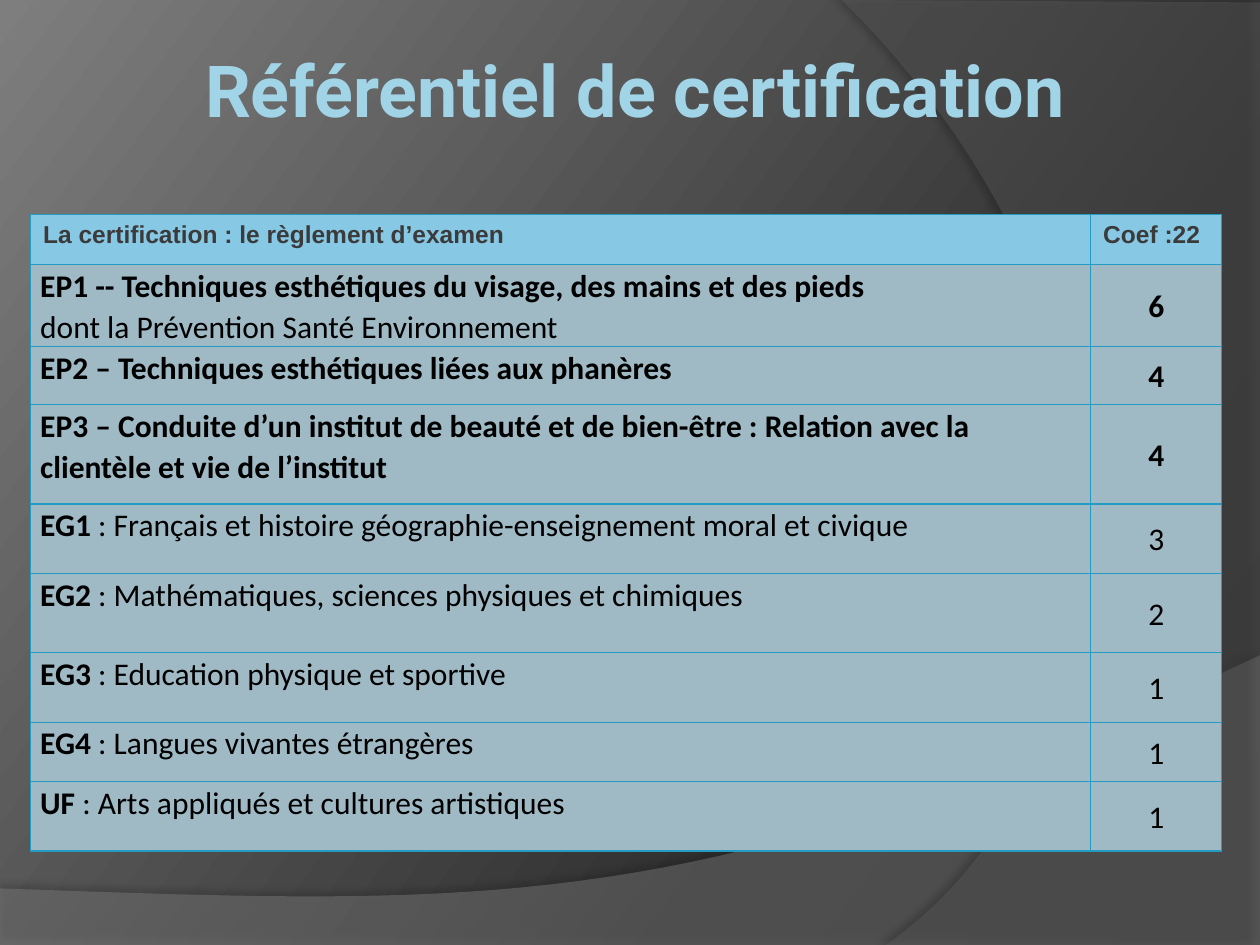
from lxml import etree
from pptx import Presentation
from pptx.dml.color import RGBColor
from pptx.enum.text import MSO_ANCHOR as Anchor, MSO_AUTO_SIZE as AutoSize, PP_ALIGN as Align
from pptx.oxml import parse_xml
from pptx.oxml.ns import nsdecls, qn
from pptx.util import Cm, Pt

COLORS = {
    "title": "A1D4E7", "header": "87C8E5", "header_text": "3B3B3B",
    "body": "9FBAC5", "text": "000000", "border": "239BC2",
    "dark": "282828", "middle": "2F2F2F", "light": "7E7E7E",
    "wave": "7F7F7F", "arc": "5E5E5E", "shadow": "000000",
}


def add_color(parent, color, alpha=None):
    element = etree.SubElement(parent, qn("a:srgbClr"), val=color)
    if alpha is not None:
        etree.SubElement(element, qn("a:alpha"), val=str(alpha * 1000))


def curve(start, control1, control2, end, steps=40):
    points = []
    for step in range(steps + 1):
        t = step / steps
        weights = ((1 - t) ** 3, 3 * t * (1 - t) ** 2, 3 * t * t * (1 - t), t ** 3)
        points.append(tuple(
            sum(weight * value for weight, value in zip(weights, axis))
            for axis in zip(start, control1, control2, end)
        ))
    return points


presentation = Presentation()
presentation.slide_width = Cm(25.4)
presentation.slide_height = Cm(19.05)
slide = presentation.slides.add_slide(presentation.slide_layouts[5])

background = slide.background.fill
background.gradient()
background.gradient_angle = 143
stops = background.gradient_stops[0]._gs.getparent()
for stop in list(stops):
    stops.remove(stop)
for position, name in ((0, "dark"), (30, "middle"), (100, "light")):
    stop = etree.SubElement(stops, qn("a:gs"), pos=str(position * 1000))
    add_color(stop, COLORS[name])

wave = curve((25.4, 13.21), (14.2, 18.52), (9.93, 18.26), (0, 17.91))
wave += [(0, 19.05), (25.4, 19.05)]
arc = curve((17.86, 19.05), (22.63, 15.72), (24.05, 6.99), (16.97, 0))
arc += [(25.4, 0.05), (25.4, 19.05)]
decorations = (("wave", wave, 45, 35, 3.5, 270), ("arc", arc, 40, 45, 4, 180))
for index, (name, points, opacity, shadow_opacity, distance, direction) in enumerate(decorations):
    corners = [(Cm(x), Cm(y)) for x, y in points]
    builder = slide.shapes.build_freeform(*corners[0])
    builder.add_line_segments(corners[1:], close=True)
    shape = builder.convert_to_shape()
    shape.fill.solid()
    shape.fill.fore_color.rgb = RGBColor.from_string(COLORS[name])
    color = shape.fill._xPr.find(qn("a:solidFill"))[0]
    etree.SubElement(color, qn("a:alpha"), val=str(opacity * 1000))
    shape.line.fill.background()
    shape.shadow.inherit = False
    effects = shape._element.spPr.find(qn("a:effectLst"))
    shadow = etree.SubElement(
        effects, qn("a:outerShdw"), blurRad=str(Pt(4)), dist=str(Pt(distance)),
        dir=str(direction * 60000), algn="ctr", rotWithShape="0",
    )
    add_color(shadow, COLORS["shadow"], shadow_opacity)
    slide.shapes._spTree.insert(2 + index, shape._element)

title = slide.shapes.title
title.left, title.top, title.width, title.height = Cm(1.51), Cm(0.93), Cm(22.6), Cm(2.8)
frame = title.text_frame
frame.text = "Référentiel de certification"
frame.auto_size = AutoSize.NONE
frame.vertical_anchor = Anchor.TOP
frame.margin_left = frame.margin_right = Cm(0.13)
frame.margin_top = frame.margin_bottom = 0
paragraph = frame.paragraphs[0]
paragraph.alignment = Align.CENTER
paragraph.font.name = "Roboto"
paragraph.font.size = Pt(41)
paragraph.font.bold = True
paragraph.font.color.rgb = RGBColor.from_string(COLORS["title"])

exams = [
    (1.01, [("La certification : le règlement d’examen", "")], "Coef :22"),
    (1.65, [("EP1 -- Techniques esthétiques du visage, des mains et des pieds", ""),
            ("", "dont la Prévention Santé Environnement")], "6"),
    (1.17, [("EP2 – Techniques esthétiques liées aux phanères", "")], "4"),
    (2.0, [("EP3 – Conduite d’un institut de beauté et de bien-être : Relation avec la "
            "clientèle et vie de l’institut", "")], "4"),
    (1.4, [("EG1", " : Français et histoire géographie-enseignement moral et civique")], "3"),
    (1.6, [("EG2", " : Mathématiques, sciences physiques et chimiques")], "2"),
    (1.4, [("EG3", " : Education physique et sportive")], "1"),
    (1.2, [("EG4", " : Langues vivantes étrangères")], "1"),
    (1.4, [("UF", " : Arts appliqués et cultures artistiques")], "1"),
]
heights = [Cm(height) for height, _, _ in exams]
table = slide.shapes.add_table(
    len(exams), 2, Cm(0.62), Cm(4.32), Cm(24.01), sum(heights)
).table
table.columns[0].width = Cm(21.37)
table.columns[1].width = Cm(2.64)

for row, (_, lines, coefficient) in enumerate(exams):
    table.rows[row].height = heights[row]
    header = row == 0
    bold_coefficient = row < 4
    coefficient_line = (coefficient, "") if bold_coefficient else ("", coefficient)
    for column, content in enumerate((lines, [coefficient_line])):
        cell = table.cell(row, column)
        cell.fill.solid()
        cell.fill.fore_color.rgb = RGBColor.from_string(COLORS["header" if header else "body"])
        cell.margin_left = cell.margin_right = Cm(0.25 if header else 0.19)
        cell.margin_top = cell.margin_bottom = Cm(0.13 if header else 0)
        centered = column == 1 and not header
        cell.vertical_anchor = Anchor.MIDDLE if centered else Anchor.TOP
        for index, parts in enumerate(content):
            frame = cell.text_frame
            paragraph = frame.add_paragraph() if index else frame.paragraphs[0]
            paragraph.alignment = Align.CENTER if centered else Align.LEFT
            paragraph.line_spacing = 1.0 if header else 1.07
            paragraph.font.name = "Arial" if header else "Calibri"
            paragraph.font.size = Pt(14 if header else 18)
            paragraph.font.color.rgb = RGBColor.from_string(
                COLORS["header_text" if header else "text"])
            for text, bold in zip(parts, (True, False)):
                if text:
                    run = paragraph.add_run()
                    run.text = text
                    run.font.bold = bold
        properties = cell._tc.get_or_add_tcPr()
        for index, side in enumerate(("lnL", "lnR", "lnT", "lnB")):
            properties.insert(index, parse_xml(
                f'<a:{side} {nsdecls("a")} w="{Pt(0.75)}"><a:solidFill>'
                f'<a:srgbClr val="{COLORS["border"]}"/></a:solidFill></a:{side}>'
            ))

presentation.save("out.pptx")
